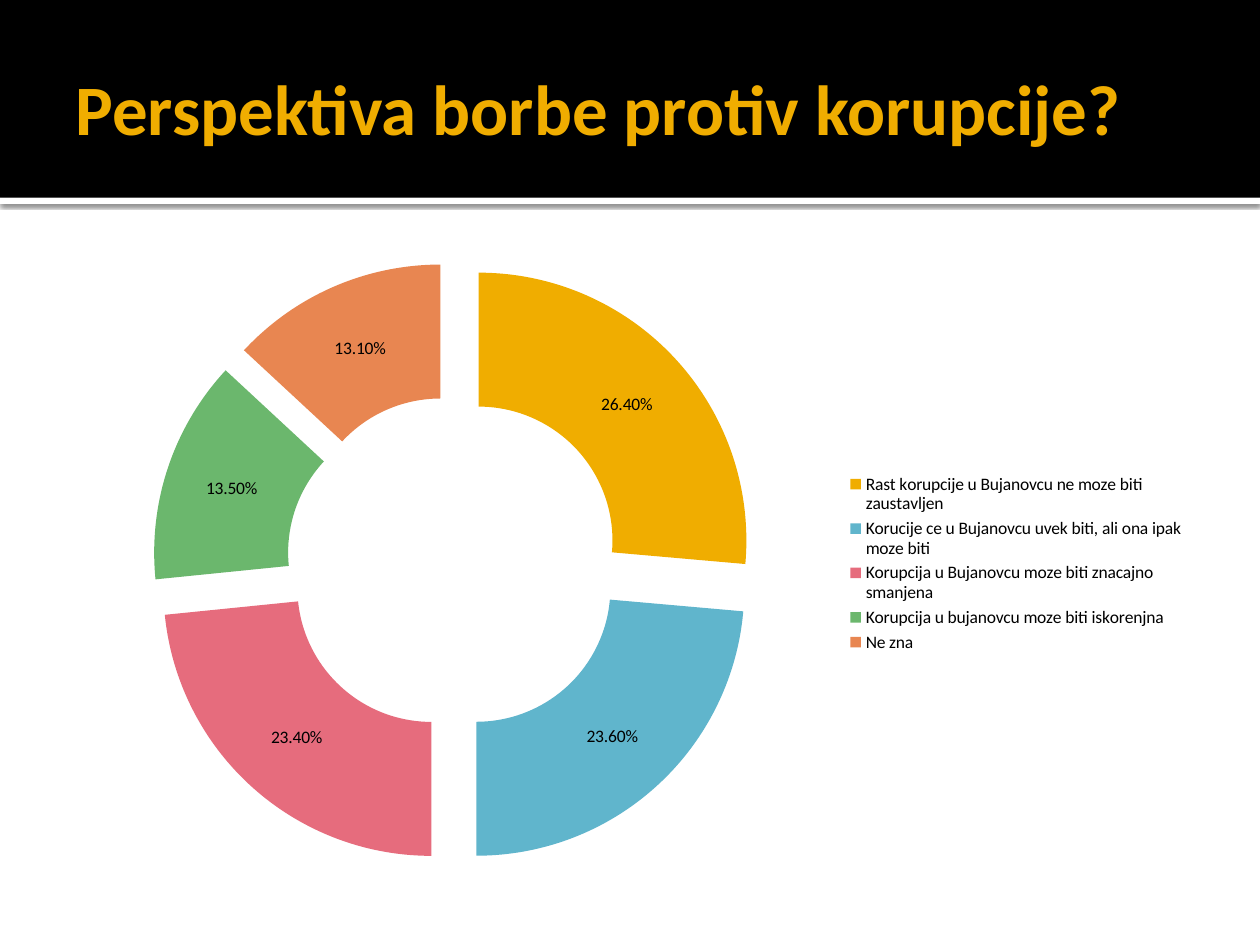
import lxml.etree
import pptx
import pptx.chart.data
import pptx.dml.color
import pptx.enum.chart
import pptx.enum.text
import pptx.oxml.ns
import pptx.util

Pt = pptx.util.Pt
COLORS = {
    "band": "000000",
    "strip": "FFFFFF",
    "title": "F0AD00",
    "text": "000000",
    "slices": ["F0AD00", "60B5CC", "E66C7D", "6BB76D", "E88651"],
}
ANSWERS = {
    "Rast korupcije u Bujanovcu ne moze biti zaustavljen": 0.264,
    "Korucije ce u Bujanovcu uvek biti, ali ona ipak moze biti": 0.236,
    "Korupcija u Bujanovcu moze biti znacajno smanjena": 0.234,
    "Korupcija u bujanovcu moze biti iskorenjna": 0.135,
    "Ne zna": 0.131,
}


def rgb(color):
    return pptx.dml.color.RGBColor.from_string(color)


def apply_format(target, values):
    for name, value in values.items():
        setattr(target, name, value)


class SlideBuilder:
    font_name = "Calibri"

    def __init__(self, slide):
        self.slide = slide

    def style_font(self, font, size, color, bold=False):
        apply_format(font, {"name": self.font_name, "size": Pt(size), "bold": bold})
        font.color.rgb = rgb(color)

    def rectangle(self, box, color):
        shape = self.slide.shapes.add_shape(
            pptx.enum.shapes.MSO_SHAPE.RECTANGLE, *map(Pt, box))
        shape.shadow.inherit = False
        shape.fill.solid()
        shape.fill.fore_color.rgb = rgb(color)
        shape.line.fill.background()
        return shape

    def drop_shadow(self, shape, color, opacity, blur, distance, angle):
        qn = pptx.oxml.ns.qn
        effects = shape._element.spPr.find(qn("a:effectLst"))
        shadow = lxml.etree.SubElement(
            effects, qn("a:outerShdw"), blurRad=str(Pt(blur)), dist=str(Pt(distance)),
            dir=str(angle * 60000), rotWithShape="0")
        shade = lxml.etree.SubElement(shadow, qn("a:srgbClr"), val=color)
        lxml.etree.SubElement(shade, qn("a:alpha"), val=str(opacity * 1000))

    def title(self, box, text, size, color):
        frame = self.slide.shapes.add_textbox(*map(Pt, box)).text_frame
        apply_format(frame, {
            "word_wrap": True,
            "vertical_anchor": pptx.enum.text.MSO_ANCHOR.MIDDLE,
            "margin_left": Pt(7.2),
            "margin_right": Pt(3.6),
            "margin_top": Pt(3.6),
            "margin_bottom": Pt(3.6),
        })
        run = frame.paragraphs[0].add_run()
        run.text = text
        self.style_font(run.font, size, color, bold=True)

    def doughnut(self, box, values, slice_colors, size, color):
        data = pptx.chart.data.CategoryChartData(number_format="0.00%")
        data.categories = values.keys()
        data.add_series("Series 1", values.values())
        chart = self.slide.shapes.add_chart(
            pptx.enum.chart.XL_CHART_TYPE.DOUGHNUT_EXPLODED, *map(Pt, box), data).chart
        apply_format(chart, {"has_title": False, "has_legend": True})
        self.style_font(chart.font, size, color)
        apply_format(chart.legend, {
            "position": pptx.enum.chart.XL_LEGEND_POSITION.RIGHT,
            "include_in_layout": False,
        })
        plot = chart.plots[0]
        apply_format(plot, {"vary_by_categories": True, "has_data_labels": True})
        apply_format(plot.data_labels, {
            "show_value": True,
            "show_percentage": False,
            "number_format": "0.00%",
            "number_format_is_linked": False,
        })
        for index, slice_color in enumerate(slice_colors):
            fill = plot.series[0].points[index].format.fill
            fill.solid()
            fill.fore_color.rgb = rgb(slice_color)


def main():
    presentation = pptx.Presentation()
    apply_format(presentation, {"slide_width": Pt(720), "slide_height": Pt(540)})
    builder = SlideBuilder(presentation.slides.add_slide(presentation.slide_layouts[6]))
    strip = builder.rectangle((0, 113, 720, 3.6), COLORS["strip"])
    builder.drop_shadow(strip, "000000", opacity=60, blur=2.5, distance=0.8, angle=90)
    builder.rectangle((0, 0, 720, 113), COLORS["band"])
    builder.title((36, 12.2, 648, 98.6), "Perspektiva borbe protiv korupcije?",
                  40.5, COLORS["title"])
    builder.doughnut((36, 139.7, 648, 364.3), ANSWERS, COLORS["slices"],
                     10, COLORS["text"])
    presentation.save("out.pptx")


if __name__ == "__main__":
    main()
